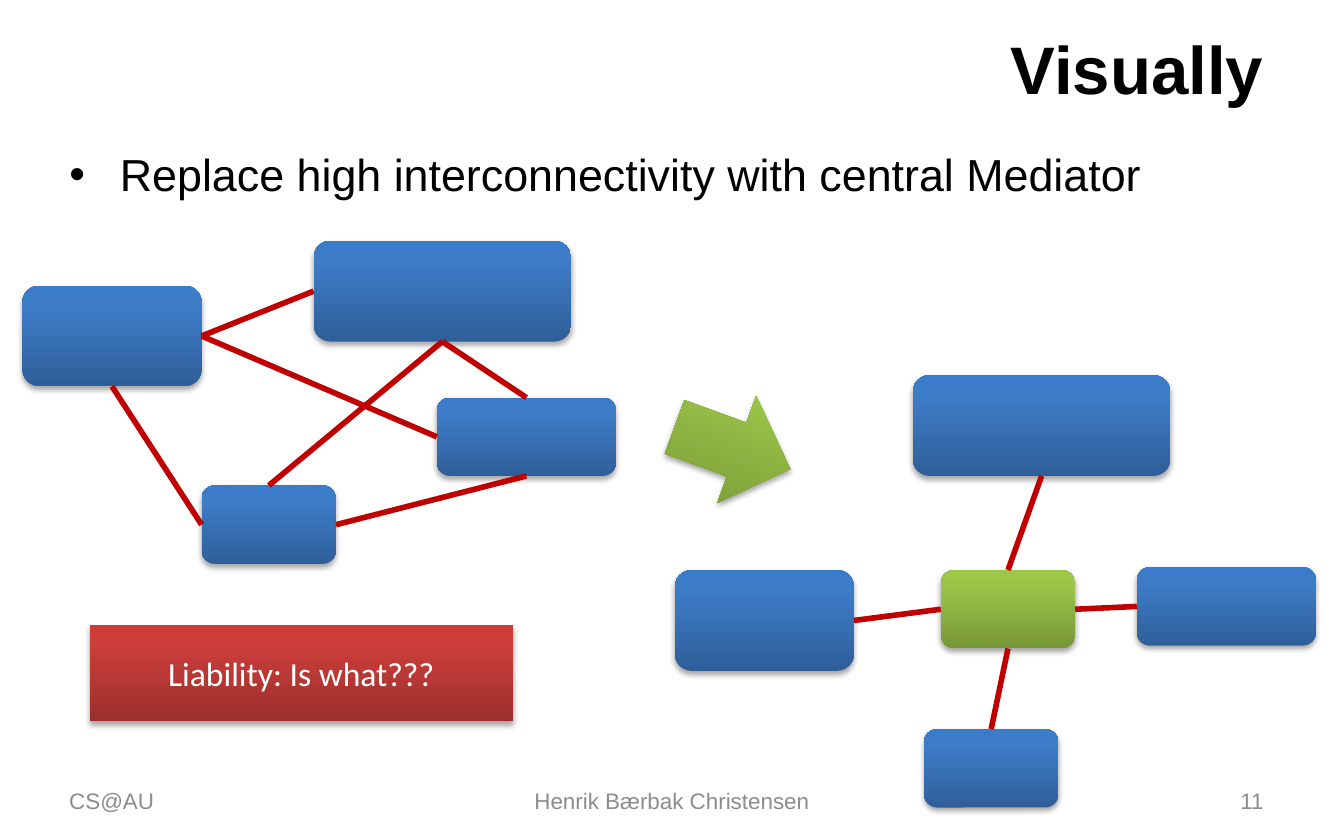
from copy import deepcopy

from lxml.etree import SubElement
from pptx import Presentation
from pptx.dml.color import RGBColor
from pptx.enum.shapes import MSO_CONNECTOR, MSO_SHAPE
from pptx.enum.text import MSO_ANCHOR, PP_ALIGN
from pptx.oxml.ns import qn
from pptx.util import Inches, Pt

# The slide is a grid of 240 columns by 150 rows, 24 to the inch
COLUMNS, ROWS, PER_INCH = 240, 150, 24
TOP, LEFT, BOTTOM, RIGHT = range(4)

# Gradients run from the bottom edge to the top edge
BLUE = ("2F5F99", "3D7CC7", "3A7CCB")
GREEN = ("779737", "9BC348", "9DC746")
RED = ("9C2F2D", "CB3E3A", "CE3B37")
STOPS = (0, 0.8, 1)
LINK, GREY = "C00000", "8C8C8C"


def color(hex_text):
    return RGBColor.from_string(hex_text)


def grid(*cells):
    return [Inches(cell / PER_INCH) for cell in cells]


def write(shape, text, size, font="Arial", ink="000000", bold=False,
          align=PP_ALIGN.LEFT, anchor=MSO_ANCHOR.MIDDLE):
    frame = shape.text_frame
    frame.word_wrap = True
    frame.vertical_anchor = anchor
    para = frame.paragraphs[0]
    para.alignment = align
    para.space_before = Pt(0)
    span = para.add_run()
    span.text = text
    span.font.name = font
    span.font.size = Pt(size)
    span.font.bold = bold
    span.font.color.rgb = color(ink)


def fill_placeholder(shape, cells, text, **style):
    shape.left, shape.top, shape.width, shape.height = grid(*cells)
    write(shape, text, **style)


def add_footer(page, column, width, text, align):
    box = page.shapes.add_textbox(*grid(column, 139, width, 8))
    write(box, text, size=12, ink=GREY, align=align)


def add_shadow(shape):
    shape.shadow.inherit = False
    effects = shape._element.spPr.find(qn("a:effectLst"))
    shadow = SubElement(effects, qn("a:outerShdw"), blurRad="40000",
                        dist="23000", dir="5400000", rotWithShape="0")
    black = SubElement(shadow, qn("a:srgbClr"), val="000000")
    SubElement(black, qn("a:alpha"), val="35000")


def add_block(page, cells, gradient, kind=MSO_SHAPE.ROUNDED_RECTANGLE):
    shape = page.shapes.add_shape(kind, *grid(*cells))
    shape.line.fill.background()
    shape.fill.gradient()
    shape.fill.gradient_angle = 90
    # A new gradient has two stops; add the third
    stop_list = shape._element.spPr.find(qn("a:gradFill")).find(qn("a:gsLst"))
    stop_list.append(deepcopy(stop_list[-1]))
    for stop, position, tone in zip(shape.fill.gradient_stops, STOPS, gradient):
        stop.position = position
        stop.color.rgb = color(tone)
    add_shadow(shape)
    return shape


def add_link(page, start, start_side, end, end_side):
    link = page.shapes.add_connector(MSO_CONNECTOR.STRAIGHT, 0, 0, 0, 0)
    link.begin_connect(start, start_side)
    link.end_connect(end, end_side)
    link.line.color.rgb = color(LINK)
    link.line.width = Pt(3)
    SubElement(link._element.spPr, qn("a:effectLst"))


def draw_interconnected(page):
    west = add_block(page, (4, 51, 32, 18), BLUE)
    north = add_block(page, (56, 43, 46, 18), BLUE)
    south = add_block(page, (36, 86.7, 24, 14), BLUE)
    east = add_block(page, (78, 71, 32, 14), BLUE)
    for ends in (
        (west, RIGHT, north, LEFT),
        (west, RIGHT, east, LEFT),
        (north, BOTTOM, east, TOP),
        (north, BOTTOM, south, TOP),
        (south, LEFT, west, BOTTOM),
        (south, RIGHT, east, BOTTOM),
    ):
        add_link(page, *ends)


def draw_mediated(page):
    west = add_block(page, (120.5, 101.8, 32, 18), BLUE)
    north = add_block(page, (163, 67, 46, 18), BLUE)
    south = add_block(page, (165, 130.2, 24, 14), BLUE)
    east = add_block(page, (203, 101.3, 32, 14), BLUE)
    mediator = add_block(page, (168, 101.8, 24, 14), GREEN)
    for side, block, block_side in (
        (LEFT, west, RIGHT),
        (TOP, north, BOTTOM),
        (RIGHT, east, LEFT),
        (BOTTOM, south, TOP),
    ):
        add_link(page, mediator, side, block, block_side)


def main():
    deck = Presentation()
    deck.slide_width, deck.slide_height = grid(COLUMNS, ROWS)
    page = deck.slides.add_slide(deck.slide_layouts[1])

    # Title and bullet
    title, body = page.placeholders
    fill_placeholder(title, (12, 4.3, 216, 15.6), "Visually",
                     size=36, bold=True, align=PP_ALIGN.RIGHT)
    fill_placeholder(body, (10, 25, 218, 113.3),
                     "Replace high interconnectivity with central Mediator",
                     size=24, anchor=MSO_ANCHOR.TOP)

    # Footer
    add_footer(page, 10, 56, "CS@AU", PP_ALIGN.LEFT)
    add_footer(page, 82, 76, "Henrik Bærbak Christensen", PP_ALIGN.CENTER)
    add_footer(page, 172, 56, "11", PP_ALIGN.RIGHT)

    # Before, arrow, after
    draw_interconnected(page)
    arrow = add_block(page, (119.8, 69.8, 22, 20.4), GREEN, MSO_SHAPE.RIGHT_ARROW)
    arrow.rotation = 20
    draw_mediated(page)

    # Question
    question = add_block(page, (16, 111.6, 75.6, 17.2), RED, MSO_SHAPE.RECTANGLE)
    write(question, "Liability: Is what???", size=18, font="Calibri",
          ink="FFFFFF", align=PP_ALIGN.CENTER)

    deck.save("out.pptx")


if __name__ == "__main__":
    main()
